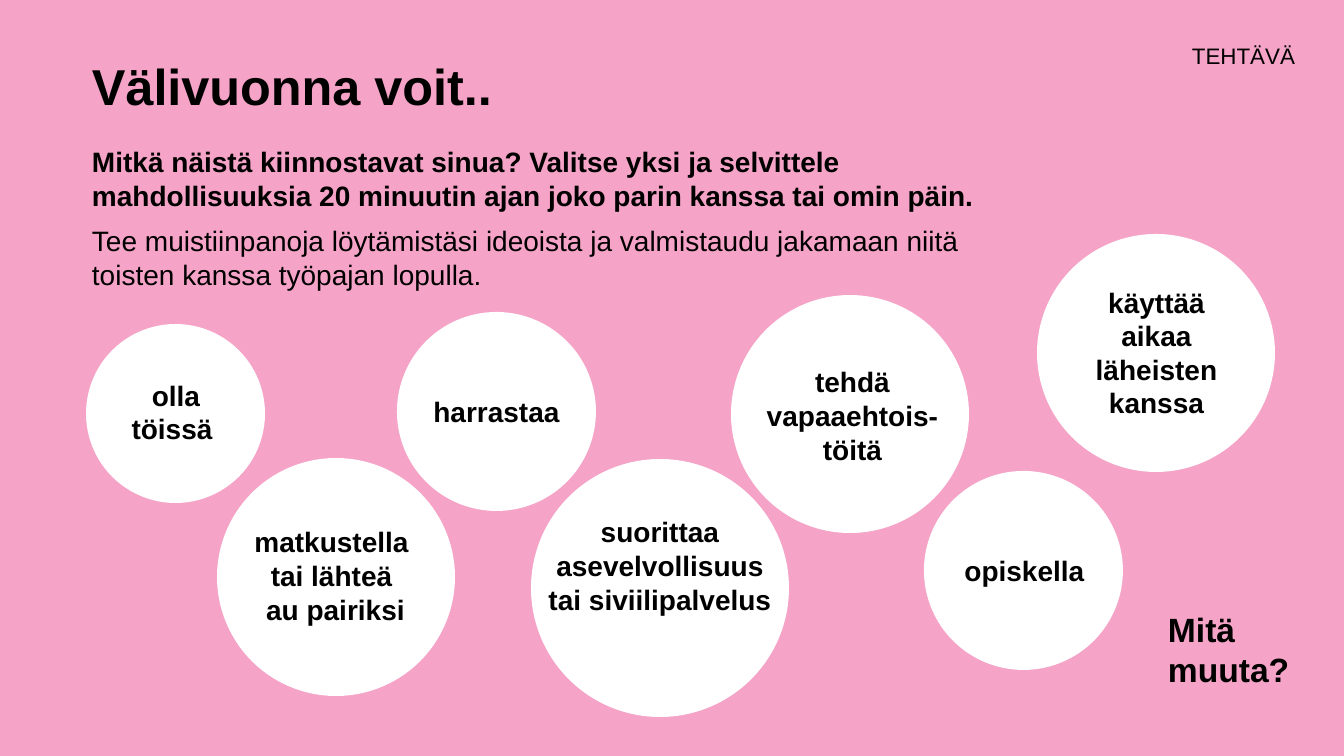
from pptx import Presentation
from pptx.dml.color import RGBColor
from pptx.enum.shapes import MSO_SHAPE
from pptx.enum.text import MSO_ANCHOR, PP_ALIGN
from pptx.util import Emu, Pt

CIRCLE = MSO_SHAPE.FLOWCHART_CONNECTOR
RECT = MSO_SHAPE.RECTANGLE
TOP, MIDDLE = MSO_ANCHOR.TOP, MSO_ANCHOR.MIDDLE
LEFT, CENTER, RIGHT = PP_ALIGN.LEFT, PP_ALIGN.CENTER, PP_ALIGN.RIGHT

EMU_PER_PX = 914400 / 100.8
PINK, WHITE, BLACK = "F5A3C7", "FFFFFF", "000000"
INSETS = (10, 5, 10, 5)
NO_INSETS = (0, 0, 0, 0)


def px(n):
    return Emu(round(n * EMU_PER_PX))


def color(value):
    return RGBColor.from_string(value)


class Deck:
    font = "Arial"

    def __init__(self, width, height):
        self.prs = Presentation()
        self.prs.slide_width, self.prs.slide_height = px(width), px(height)

    def add_slide(self, background):
        self.s = self.prs.slides.add_slide(self.prs.slide_layouts[6])
        fill = self.s.background.fill
        fill.solid()
        fill.fore_color.rgb = color(background)

    def shape(self, kind, box, fill):
        sp = self.s.shapes.add_shape(kind, *map(px, box))
        sp.shadow.inherit = False
        sp.fill.solid()
        sp.fill.fore_color.rgb = color(fill)
        sp.line.fill.background()
        return sp

    def text(self, box, paragraphs, size, **style):
        sp = self.s.shapes.add_textbox(*map(px, box))
        self.set_text(sp, paragraphs, size, **style)

    def set_text(self, sp, paragraphs, size, align=LEFT, anchor=TOP, insets=INSETS, before=0):
        """Fill a shape with (text, bold) paragraphs."""
        tf = sp.text_frame
        tf.word_wrap = True
        tf.vertical_anchor = anchor
        tf.margin_left, tf.margin_top, tf.margin_right, tf.margin_bottom = map(px, insets)
        tf.text = "\n".join(text for text, _ in paragraphs)
        for p, (_, bold) in zip(tf.paragraphs, paragraphs):
            p.alignment = align
            p.space_before = Pt(before)
            for r in p.runs:
                r.font.name = self.font
                r.font.size = Pt(size)
                r.font.bold = bold
                r.font.color.rgb = color(BLACK)

    def bubble(self, circle, label, text):
        """Draw a circle (left, top, diameter) and its label box."""
        left, top, diameter = circle
        self.shape(CIRCLE, (left, top, diameter, diameter), WHITE)
        self.text(label, [(text, True)], 20, align=CENTER)


BUBBLES = [
    ((86, 324, 179), (106, 373, 140, 78), "olla töissä "),
    ((731, 295, 238), (751, 360, 203, 112), "tehdä vapaaehtois-töitä"),
    ((397, 312, 199), (389, 389, 215, 44), "harrastaa"),
    ((924, 471, 199), (917, 548, 215, 44), "opiskella"),
    ((217, 458, 238), (228, 520, 215, 112), "matkustella \vtai lähteä \vau pairiksi"),
    ((531, 459, 258), (531, 510, 258, 112), "suorittaa asevelvollisuus tai siviilipalvelus"),
    ((1037, 234, 238), (1071, 280, 171, 146), "käyttää aikaa läheisten kanssa"),
]


def main():
    deck = Deck(1344, 756)
    deck.add_slide(PINK)
    tag = deck.shape(RECT, (1168, 37, 139, 37), PINK)
    deck.set_text(tag, [("TEHTÄVÄ", False)], 16, align=RIGHT, anchor=MIDDLE, insets=(0, 0, 12, 0))
    deck.text((92, 0, 1160, 170), [("Välivuonna voit..", True)], 36, anchor=MIDDLE, insets=NO_INSETS)
    deck.text((92, 145, 925, 512), [
        ("Mitkä näistä kiinnostavat sinua? Valitse yksi ja selvittele mahdollisuuksia "
         "20 minuutin ajan joko parin kanssa tai omin päin.", True),
        ("Tee muistiinpanoja löytämistäsi ideoista ja valmistaudu jakamaan niitä "
         "toisten kanssa työpajan lopulla.", False),
    ], 20, insets=NO_INSETS, before=8)
    for circle, label, text in BUBBLES:
        deck.bubble(circle, label, text)
    deck.text((1158, 604, 187, 92), [("Mitä muuta?", True)], 24)
    deck.prs.save("out.pptx")


if __name__ == "__main__":
    main()
